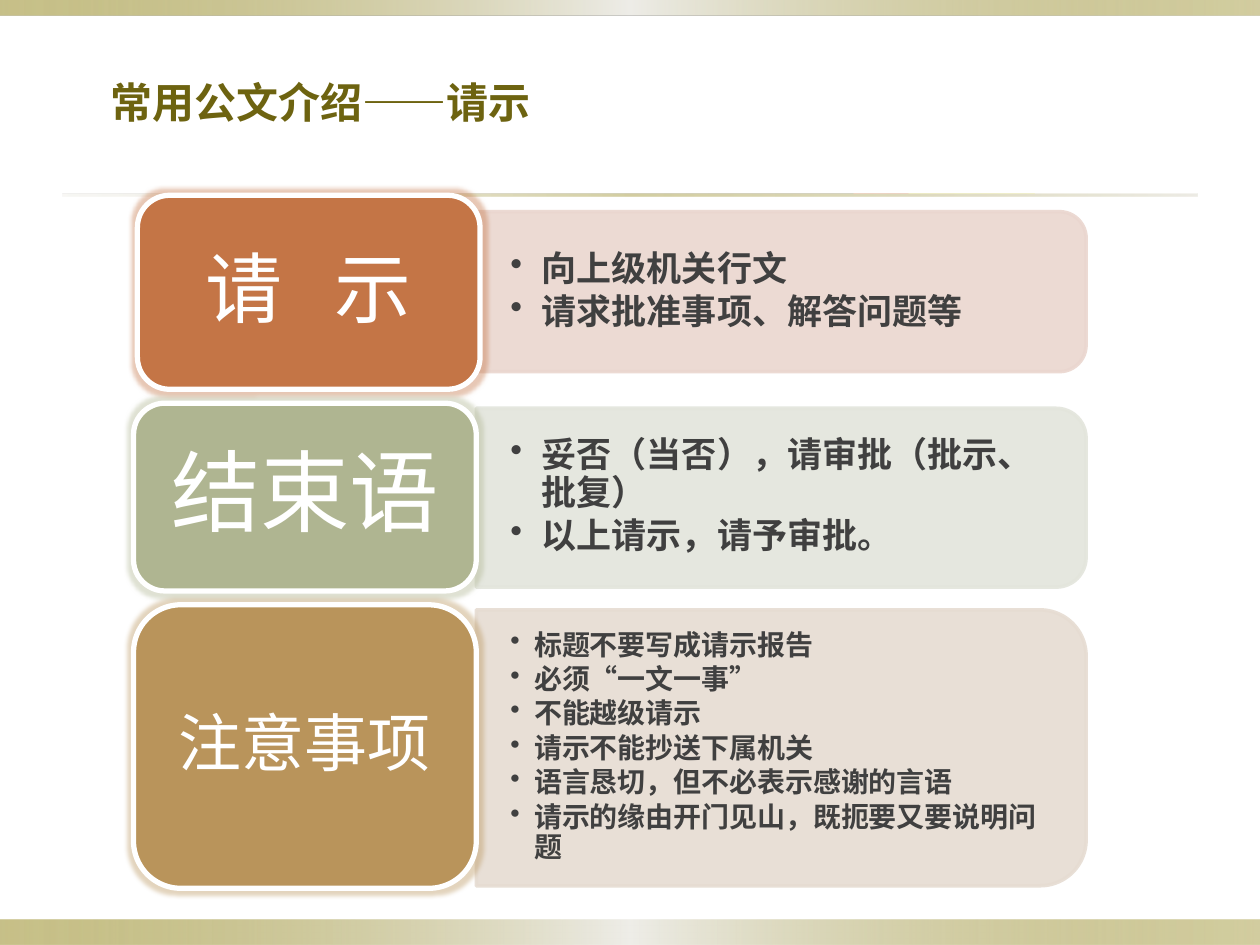
from dataclasses import dataclass

from lxml.etree import SubElement
from pptx import Presentation
from pptx.dml.color import RGBColor
from pptx.enum.shapes import MSO_SHAPE
from pptx.enum.text import MSO_ANCHOR, PP_ALIGN
from pptx.oxml.ns import qn
from pptx.util import Inches, Pt

OLIVE = RGBColor(0x91, 0x84, 0x15)
PALE = RGBColor(0xEE, 0xED, 0xE8)
SAND = RGBColor(0xDC, 0xD9, 0xCC)
TITLE_COLOR = RGBColor(0x6D, 0x63, 0x10)
BODY_COLOR = RGBColor(0x40, 0x40, 0x40)
WHITE = RGBColor(0xFF, 0xFF, 0xFF)
RUST = RGBColor(0xC4, 0x75, 0x46)
RUST_TINT = RGBColor(0xEA, 0xD6, 0xCF)
SAGE = RGBColor(0xAF, 0xB5, 0x91)
SAGE_TINT = RGBColor(0xE3, 0xE5, 0xDC)
OCHRE = RGBColor(0xB9, 0x94, 0x5B)
OCHRE_TINT = RGBColor(0xE6, 0xDC, 0xD2)

TITLE_FONT = "Noto Sans CJK SC"
BODY_FONT = "Karla"
PANEL_LEFT, PANEL_WIDTH = 3.78, 4.84
LABEL_WIDTH = 2.72
BAR_STOPS = [(0, OLIVE, 50), (50, PALE, 100), (100, OLIVE, 40)]
RULE_STOPS = [(0, SAND, 20), (50, OLIVE, 40), (100, SAND, 50)]


@dataclass
class Section:
    label: str
    color: RGBColor
    tint: RGBColor
    label_box: tuple    # left, top, height
    label_pad: float    # room taken by the rounded corners
    label_inset: float
    label_size: int
    panel_box: tuple    # top, height
    points_box: tuple   # top, width, height
    points_size: int
    points_indent: float
    points: list
    spread: int = 0     # extra points between the label's characters


SECTIONS = [
    Section("请 示", RUST, RUST_TINT, (1.09, 1.55, 1.54), 0.08, 0.18, 44,
            (1.68, 1.27), (1.74, 4.78, 1.15), 20, 0.25,
            ["向上级机关行文", "请求批准事项、解答问题等"], spread=10),
    Section("结束语", SAGE, SAGE_TINT, (1.06, 3.2, 1.49), 0.07, 0.21, 51,
            (3.24, 1.42), (3.3, 4.77, 1.28), 20, 0.25,
            ["妥否（当否），请审批（批示、批复）", "以上请示，请予审批。"]),
    Section("注意事项", OCHRE, OCHRE_TINT, (1.06, 4.8, 2.25), 0.11, 0.15, 36,
            (4.84, 2.19), (4.94, 4.73, 1.98), 16, 0.19,
            ["标题不要写成请示报告", "必须“一文一事”", "不能越级请示",
             "请示不能抄送下属机关", "语言恳切，但不必表示感谢的言语",
             "请示的缘由开门见山，既扼要又要说明问题"]),
]


def add_block(slide, preset, left, top, width, height):
    block = slide.shapes.add_shape(
        preset, Inches(left), Inches(top), Inches(width), Inches(height))
    block.shadow.inherit = False
    return block


def add_color(parent, color, opacity):
    node = SubElement(parent, qn("a:srgbClr"), val=str(color))
    SubElement(node, qn("a:alpha"), val=str(opacity * 1000))


def add_gradient_strip(slide, left, top, width, height, stops):
    strip = add_block(slide, MSO_SHAPE.RECTANGLE, left, top, width, height)
    strip.line.fill.background()
    strip.fill.gradient()
    strip.fill.gradient_angle = 0
    stop_list = strip.element.spPr.find(".//" + qn("a:gsLst"))
    stop_list.clear()
    for position, color, opacity in stops:
        stop = SubElement(stop_list, qn("a:gs"), pos=str(position * 1000))
        add_color(stop, color, opacity)


def add_text_frame(slide, left, top, width, height, inset_x=0.1, inset_y=0.05):
    box = slide.shapes.add_textbox(
        Inches(left), Inches(top), Inches(width), Inches(height))
    frame = box.text_frame
    frame.word_wrap = True
    frame.margin_left = frame.margin_right = Inches(inset_x)
    frame.margin_top = frame.margin_bottom = Inches(inset_y)
    return frame


def style_paragraph(paragraph, font, size, color, bold=False):
    paragraph.font.name = font
    paragraph.font.size = Pt(size)
    paragraph.font.color.rgb = color
    paragraph.font.bold = bold


def add_title(slide, text):
    frame = add_text_frame(slide, 0.78, 0.56, 5.95, 0.5)
    title = frame.paragraphs[0]
    title.text = text
    style_paragraph(title, TITLE_FONT, 24, TITLE_COLOR, bold=True)


def add_panel(slide, section):
    # The preset rounds its top corners, so a quarter turn moves them right
    top, height = section.panel_box
    left = PANEL_LEFT + (PANEL_WIDTH - height) / 2
    panel = add_block(slide, MSO_SHAPE.ROUND_2_SAME_RECTANGLE, left,
                      top + (height - PANEL_WIDTH) / 2, height, PANEL_WIDTH)
    panel.rotation = 90
    panel.fill.solid()
    panel.fill.fore_color.rgb = section.tint
    panel.line.color.rgb = section.tint
    panel.line.width = Pt(2)
    for color in panel.element.spPr.iter(qn("a:srgbClr")):
        SubElement(color, qn("a:alpha"), val="90000")


def add_points(slide, section):
    top, width, height = section.points_box
    frame = add_text_frame(slide, PANEL_LEFT, top, width, height, 0.27, 0.14)
    frame.vertical_anchor = MSO_ANCHOR.MIDDLE
    indent = Inches(section.points_indent)
    for index, text in enumerate(section.points):
        point = frame.add_paragraph() if index else frame.paragraphs[0]
        point.text = text
        point.level = 1
        point.line_spacing = 0.9
        point.space_after = Pt(section.points_size * 0.15)
        style_paragraph(point, BODY_FONT, section.points_size, BODY_COLOR, bold=True)
        properties = point._p.get_or_add_pPr()
        properties.set("marL", str(indent))
        properties.set("indent", str(-indent))
        bullet = properties.makeelement(qn("a:buChar"), {"char": "•"})
        properties.find(qn("a:defRPr")).addprevious(bullet)


def add_label(slide, section):
    left, top, height = section.label_box
    block = add_block(slide, MSO_SHAPE.ROUNDED_RECTANGLE, left, top, LABEL_WIDTH, height)
    block.fill.solid()
    block.fill.fore_color.rgb = section.color
    block.line.color.rgb = WHITE
    block.line.width = Pt(3)
    effects = block.element.spPr.find(qn("a:effectLst"))
    add_color(SubElement(effects, qn("a:glow"), rad=str(Pt(5))), section.color, 40)

    pad = section.label_pad
    frame = add_text_frame(slide, left + pad, top + pad, LABEL_WIDTH - 2 * pad,
                           height - 2 * pad, section.label_inset, section.label_inset / 2)
    frame.vertical_anchor = MSO_ANCHOR.MIDDLE
    label = frame.paragraphs[0]
    label.alignment = PP_ALIGN.CENTER
    label.line_spacing = 0.9
    label.space_after = Pt(section.label_size * 0.35)
    style_paragraph(label, BODY_FONT, section.label_size, WHITE)
    if section.spread:
        # The last character takes no spacing, which keeps the label centred
        spread_run = label.add_run()
        spread_run.text = section.label[:-1]
        spread_run.font._element.set("spc", str(section.spread * 100))
        label.add_run().text = section.label[-1]
    else:
        label.add_run().text = section.label


def main():
    presentation = Presentation()
    presentation.slide_width = Inches(10)
    presentation.slide_height = Inches(7.5)
    slide = presentation.slides.add_slide(presentation.slide_layouts[6])

    # Bottom and top bars, rule under the title
    add_gradient_strip(slide, 0, 7.3, 10, 0.2, BAR_STOPS)
    add_gradient_strip(slide, 0, 0, 10, 0.12, BAR_STOPS)
    add_gradient_strip(slide, 0.5, 1.54, 9, 0.02, RULE_STOPS)

    add_title(slide, "常用公文介绍——请示")

    # One row for each section
    for section in SECTIONS:
        add_panel(slide, section)
        add_points(slide, section)
        add_label(slide, section)

    presentation.save("out.pptx")


if __name__ == "__main__":
    main()
